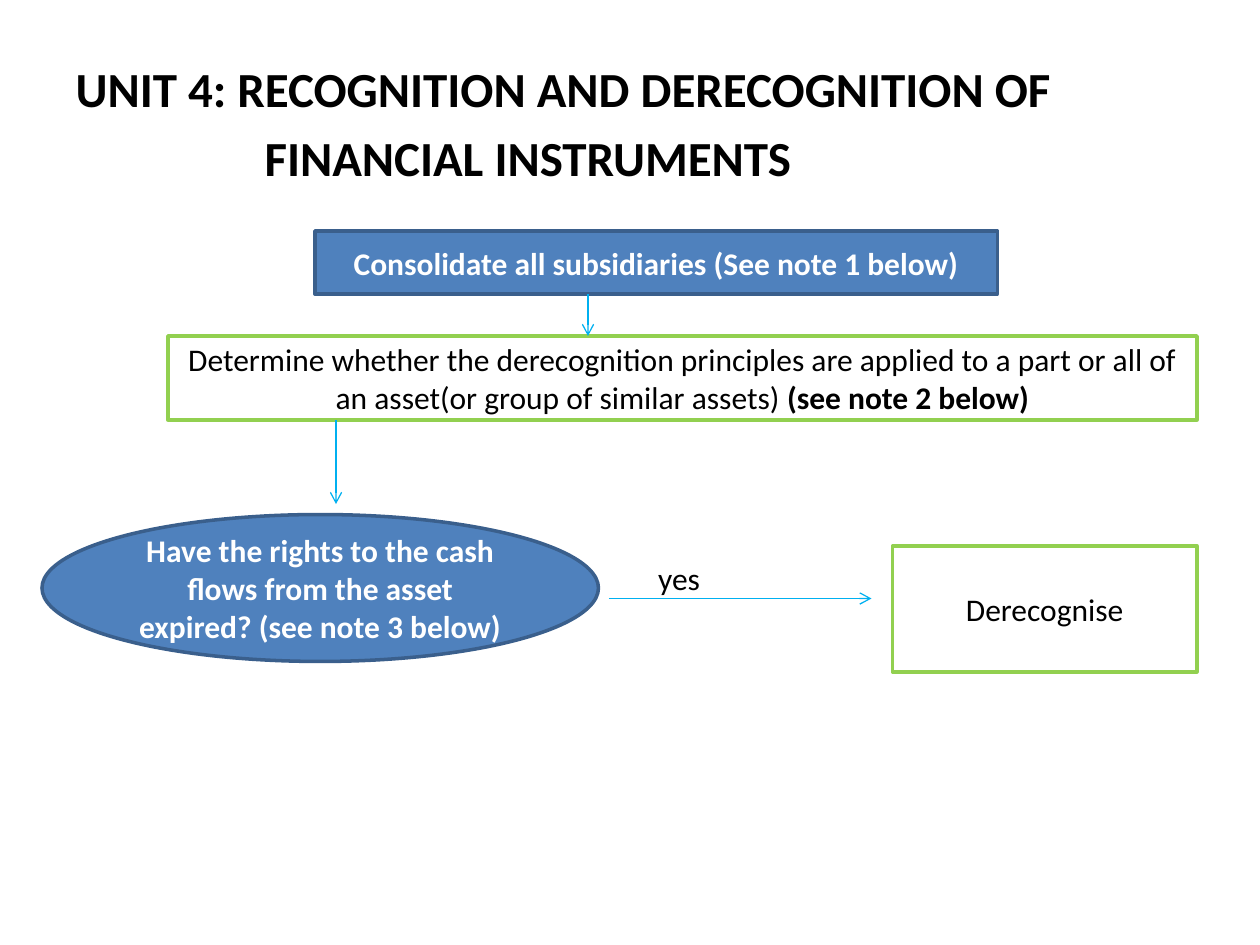
from lxml.etree import SubElement
from pptx import Presentation
from pptx.dml.color import RGBColor
from pptx.enum.shapes import MSO_CONNECTOR as Connector, MSO_SHAPE as Shape
from pptx.enum.text import MSO_ANCHOR as Anchor, MSO_AUTO_SIZE as AutoSize, PP_ALIGN as Align
from pptx.oxml.ns import qn
from pptx.util import Inches, Pt

THEME = {
    "font": "Calibri",
    "title": Pt(28), "body": Pt(18), "title_gap": Pt(5.6),
    "border": Pt(2), "arrow": Pt(0.75),
    "black": RGBColor.from_string("000000"),
    "white": RGBColor.from_string("FFFFFF"),
    "blue": RGBColor.from_string("4F81BD"),
    "navy": RGBColor.from_string("3A5F8C"),
    "green": RGBColor.from_string("92D050"),
    "cyan": RGBColor.from_string("00B0F0"),
}
COLUMNS = 120  # square grid cells across the slide

presentation = Presentation()
presentation.slide_width, presentation.slide_height = Inches(10), Inches(7.5)
slide = presentation.slides.add_slide(presentation.slide_layouts[5])
cell = presentation.slide_width / COLUMNS


def grid(*cells):
    return [round(count * cell) for count in cells]


def add_run(paragraph, text, color, bold=False, size="body"):
    run = paragraph.add_run()
    run.text = text
    run.font.color.rgb = THEME[color]
    font_format = {"name": THEME["font"], "size": THEME[size], "bold": bold}
    for name, value in font_format.items():
        setattr(run.font, name, value)


# Title: the second line is indented
title = slide.shapes.title
title.left, title.top, title.width, title.height = grid(6, 5, 108, 15)
frame_format = {"auto_size": AutoSize.NONE, "vertical_anchor": Anchor.TOP, "word_wrap": True}
for name, value in frame_format.items():
    setattr(title.text_frame, name, value)
first_line = title.text_frame.paragraphs[0]
second_line = title.text_frame.add_paragraph()
second_line.space_before = THEME["title_gap"]
second_line._p.get_or_add_pPr().set("marL", str(grid(18)[0]))
for paragraph, text in (
    (first_line, "UNIT 4: RECOGNITION AND DERECOGNITION OF"),
    (second_line, "FINANCIAL INSTRUMENTS"),
):
    paragraph.alignment = Align.LEFT
    add_run(paragraph, text, "black", True, "title")

# Flowchart steps: preset, grid box, fill, border, text colour, (text, bold) runs
steps = [
    (Shape.RECTANGLE, (30, 22, 65, 6), "blue", "navy", "white",
     [("Consolidate all subsidiaries (See note 1 below)", True)]),
    (Shape.RECTANGLE, (16, 32, 98, 8), "white", "green", "black",
     [("Determine whether the derecognition principles are applied to a part or all of "
       "an asset(or group of similar assets) ", False), ("(see note 2 below)", True)]),
    (Shape.OVAL, (4, 49, 53, 14), "blue", "navy", "white",
     [("Have the rights to the cash flows from the asset expired? (see note 3 below)", True)]),
    (Shape.RECTANGLE, (85, 52, 29, 12), "white", "green", "black", [("Derecognise", False)]),
]
for preset, box, fill, border, color, runs in steps:
    step = slide.shapes.add_shape(preset, *grid(*box))
    step.shadow.inherit = False
    step.fill.solid()
    step.fill.fore_color.rgb = THEME[fill]
    step.line.color.rgb = THEME[border]
    step.line.width = THEME["border"]
    step.text_frame.word_wrap = True
    step.text_frame.vertical_anchor = Anchor.MIDDLE
    paragraph = step.text_frame.paragraphs[0]
    paragraph.alignment = Align.CENTER
    for text, bold in runs:
        add_run(paragraph, text, color, bold)

# Arrows: start and end points in grid cells
for ends in [(56, 28, 56, 32), (32, 40, 32, 48), (58, 57, 83, 57)]:
    arrow = slide.shapes.add_connector(Connector.STRAIGHT, *grid(*ends))
    arrow.line.color.rgb = THEME["cyan"]
    arrow.line.width = THEME["arrow"]
    SubElement(arrow.line._get_or_add_ln(), qn("a:tailEnd"), type="arrow")
    SubElement(arrow._element.spPr, qn("a:effectLst"))

# Label on the last arrow
label = slide.shapes.add_textbox(*grid(61.5, 53, 10, 4))
label.text_frame.word_wrap = True
label.text_frame.vertical_anchor = Anchor.MIDDLE
add_run(label.text_frame.paragraphs[0], "yes", "black")

presentation.save("out.pptx")
